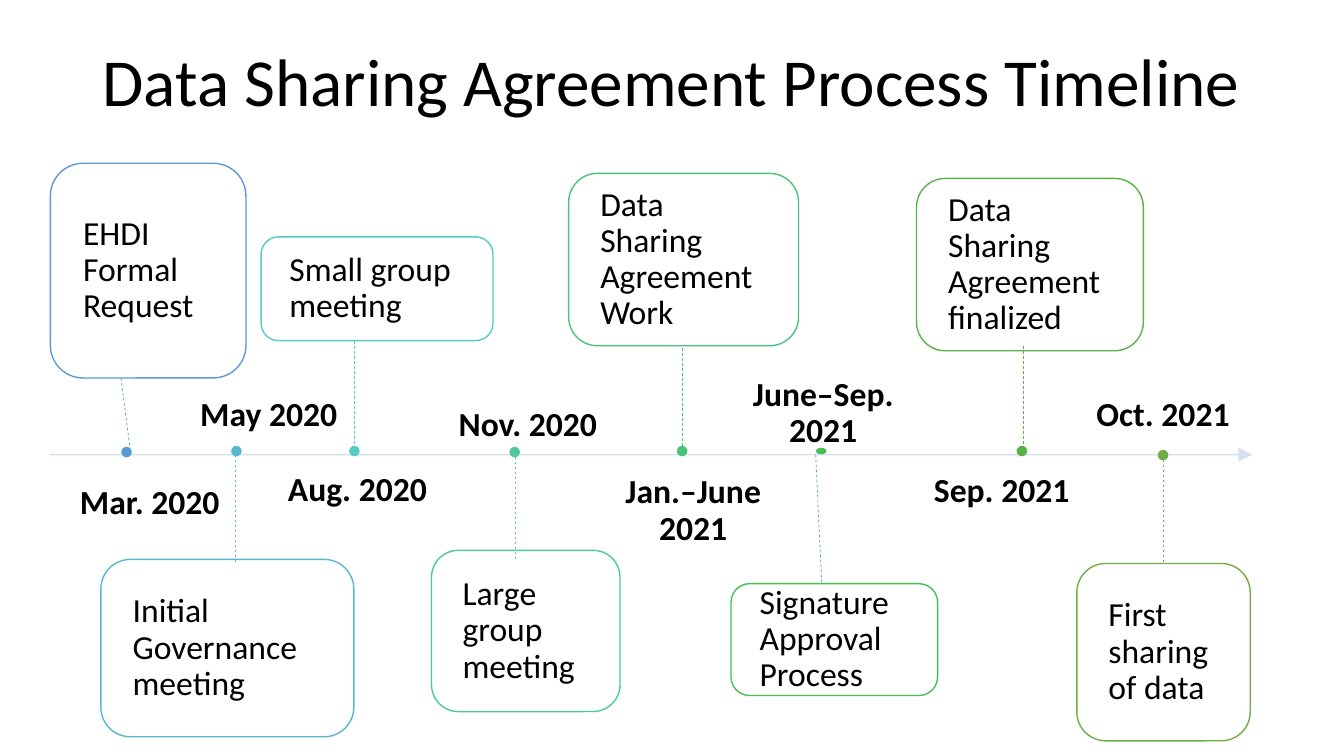
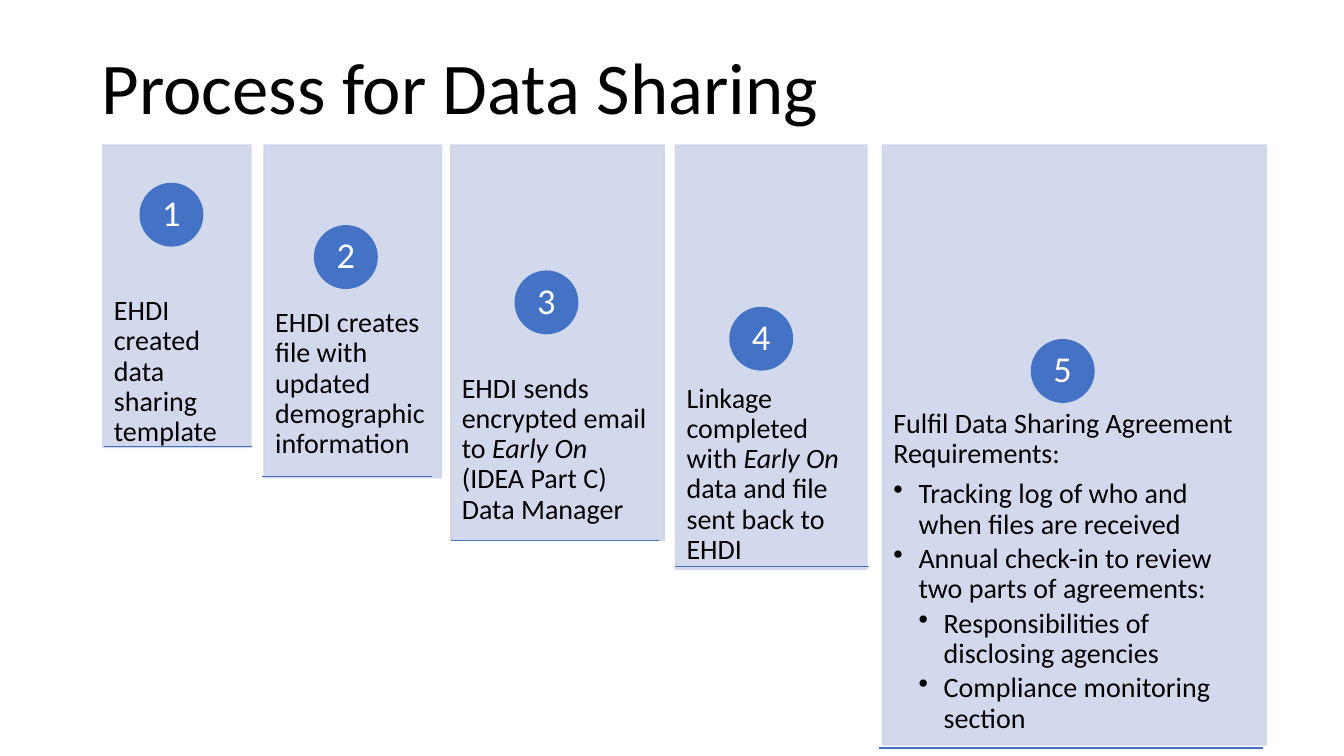
from dataclasses import dataclass
from typing import Optional, Sequence, Union

from lxml.etree import SubElement
from pptx import Presentation
from pptx.dml.color import RGBColor
from pptx.enum.dml import MSO_LINE
from pptx.enum.shapes import MSO_CONNECTOR, MSO_SHAPE
from pptx.enum.text import MSO_ANCHOR as Anchor, PP_ALIGN as Align
from pptx.oxml.ns import qn
from pptx.util import Inches, Pt


@dataclass(frozen=True)
class Theme:
    font: str = "Calibri"
    black: str = "000000"
    white: str = "FFFFFF"
    axis: str = "D2DEEF"
    panel: str = "CFD5EA"
    accent: str = "4472C4"
    opacity: int = 90
    timeline_size: int = 24
    step_size: int = 20
    number_size: int = 26


THEME = Theme()


@dataclass(frozen=True)
class Run:
    text: str
    italic: bool = False


@dataclass(frozen=True)
class Para:
    runs: Sequence[Run]
    level: int = 0  # 0 is plain text, 1 and up are bullets
    after: float = 0


@dataclass(frozen=True)
class Milestone:
    date: str
    date_at: tuple[float, float]
    event: str
    box: tuple[float, float, float, float]
    color: str
    stem: tuple[float, float, float, float]
    dot: tuple[float, float]
    above: bool  # date stands above the axis
    date_height: float = 0.64
    dot_height: float = 0.09


@dataclass(frozen=True)
class Step:
    left: float
    width: float
    height: float
    text_top: float
    circle: tuple[float, float]
    rule: tuple[float, float, float]  # left, top, width
    paras: Sequence[Para]


# Shared drawing functions
def rgb(color: str) -> RGBColor:
    return RGBColor.from_string(color)


def set_opacity(shape, percent: int) -> None:
    for color in shape.element.spPr.iter(qn("a:srgbClr")):
        SubElement(color, qn("a:alpha")).set("val", str(percent * 1000))


def add_bullet(paragraph, level: int) -> None:
    props = paragraph._p.get_or_add_pPr()
    props.set("marL", str(Inches(0.25 * level)))
    props.set("indent", str(Inches(-0.25)))
    SubElement(props, qn("a:buChar")).set("char", "•")


def put_text(shape, content: Union[str, Sequence[Para]], *, size: float,
             color: str = THEME.black, bold: bool = False,
             align: Align = Align.LEFT, anchor: Anchor = Anchor.MIDDLE,
             insets: tuple[float, float, float, float] = (0, 0, 0, 0)) -> None:
    """Fill a shape; insets are left, top, right, bottom in inches."""
    frame = shape.text_frame
    frame.word_wrap = True
    frame.vertical_anchor = anchor
    (frame.margin_left, frame.margin_top,
     frame.margin_right, frame.margin_bottom) = map(Inches, insets)
    paras = [Para([Run(content)])] if isinstance(content, str) else content
    for index, para in enumerate(paras):
        paragraph = frame.add_paragraph() if index else frame.paragraphs[0]
        if para.level:
            add_bullet(paragraph, para.level)
        paragraph.alignment = align
        paragraph.line_spacing = 0.9
        paragraph.space_after = Pt(para.after)
        for part in para.runs:
            run = paragraph.add_run()
            run.text = part.text
            font = run.font
            font.name, font.size = THEME.font, Pt(size)
            font.bold, font.italic = bold, part.italic
            font.color.rgb = rgb(color)


def add_text(slide, left: float, top: float, width: float, height: float,
             content: str, **text_format) -> None:
    box = slide.shapes.add_textbox(*map(Inches, (left, top, width, height)))
    put_text(box, content, **text_format)


def add_title(slide, text: str, top: float, size: float, align: Align) -> None:
    add_text(slide, 0.91, top, 11.5, 1.24, text, size=size, align=align,
             insets=(0.1, 0.05, 0.1, 0.05))


def add_block(slide, kind: MSO_SHAPE, left: float, top: float, width: float,
              height: float, fill: str, line: str):
    block = slide.shapes.add_shape(
        kind, *map(Inches, (left, top, width, height)))
    block.shadow.inherit = False
    block.fill.solid()
    block.fill.fore_color.rgb = rgb(fill)
    block.line.color.rgb = rgb(line)
    block.line.width = Pt(1)
    return block


def add_line(slide, x1: float, y1: float, x2: float, y2: float, color: str,
             width: float = 1, dash: Optional[MSO_LINE] = None,
             arrow: bool = False):
    connector = slide.shapes.add_connector(
        MSO_CONNECTOR.STRAIGHT, *map(Inches, (x1, y1, x2, y2)))
    connector.line.color.rgb = rgb(color)
    connector.line.width = Pt(width)
    if dash:
        connector.line.dash_style = dash
    props = connector.element.spPr
    if arrow:
        tail = SubElement(props.find(qn("a:ln")), qn("a:tailEnd"))
        for key, value in (("type", "triangle"), ("w", "lg"), ("len", "lg")):
            tail.set(key, value)
    SubElement(props, qn("a:effectLst"))
    return connector


# Timeline content
MILESTONES = [
    Milestone("Mar. 2020", (0.73, 4.82), "EHDI Formal Request",
              (0.5, 1.62, 1.94, 2.13), "5B9BD5",
              (1.2, 3.75, 1.3, 4.53), (1.21, 4.44), False),
    Milestone("May 2020", (1.91, 3.66), "Initial Governance meeting",
              (1, 5.55, 2.51, 1.76), "57B7D1",
              (2.33, 4.51, 2.33, 5.59), (2.3, 4.43), True),
    Milestone("Aug. 2020", (2.79, 4.69), "Small group meeting",
              (2.59, 2.35, 2.3, 1.03), "53CCC5",
              (3.51, 3.38, 3.51, 4.46), (3.47, 4.43), False),
    Milestone("Nov. 2020", (4.48, 3.76), "Large group meeting",
              (4.28, 5.46, 1.87, 1.6), "4FC7A0",
              (5.11, 4.48, 5.11, 5.56), (5.06, 4.44), True),
    Milestone("Jan.–June 2021", (6.12, 4.71), "Data Sharing Agreement Work",
              (5.64, 1.72, 2.28, 1.71), "4CC27B",
              (6.77, 3.45, 6.77, 4.53), (6.72, 4.43), False),
    Milestone("June–Sep. 2021", (7.41, 3.75), "Signature Approval Process",
              (7.25, 5.79, 2.05, 1.11), "48BD58",
              (8.09, 4.51, 8.15, 5.78), (8.1, 4.45), True,
              date_height=0.71, dot_height=0.05),
    Milestone("Sep. 2021", (9.18, 4.7), "Data Sharing Agreement finalized",
              (9.09, 1.77, 2.25, 1.71), "55B646",
              (10.15, 3.43, 10.15, 4.51), (10.09, 4.43), False),
    Milestone("Oct. 2021", (10.78, 3.66), "First sharing of data",
              (10.68, 5.59, 1.72, 1.76), "70AD47",
              (11.54, 4.51, 11.54, 5.59), (11.49, 4.47), True),
]

# Process content
STEPS = [
    Step(1.02, 1.47, 3, 2.94, (1.39, 1.82), (1.03, 4.43, 1.47),
         [Para([Run("EHDI created data sharing template")])]),
    Step(2.62, 1.76, 3.3, 3.06, (3.12, 2.24), (2.6, 4.73, 1.68),
         [Para([Run("EHDI creates file with updated demographic "
                    "information")])]),
    Step(4.47, 2.12, 3.92, 3.71, (5.11, 2.69), (4.47, 5.36, 2.07),
         [Para([Run("EHDI sends encrypted email to "),
                Run("Early On ", italic=True),
                Run("(IDEA Part C) Data Manager")])]),
    Step(6.7, 1.9, 4.21, 3.81, (7.24, 3.05), (6.69, 5.62, 1.93),
         [Para([Run("Linkage completed with "),
                Run("Early On", italic=True),
                Run(" data and file sent back to EHDI")])]),
    Step(8.75, 3.81, 5.95, 4.06, (10.23, 3.37), (8.72, 7.42, 3.81),
         [Para([Run("Fulfil Data Sharing Agreement Requirements:")], after=7),
          *(Para([Run(text)], level, after=3) for level, text in (
              (1, "Tracking log of who and when files are received"),
              (1, "Annual check-in to review two parts of agreements:"),
              (2, "Responsibilities of disclosing agencies"),
              (2, "Compliance monitoring section")))]),
]


def draw_milestone(slide, item: Milestone) -> None:
    add_text(slide, *item.date_at, 1.51, item.date_height, item.date,
             size=THEME.timeline_size, bold=True, align=Align.CENTER,
             anchor=Anchor.BOTTOM if item.above else Anchor.TOP)
    event = add_block(slide, MSO_SHAPE.ROUNDED_RECTANGLE, *item.box,
                      THEME.white, item.color)
    put_text(event, item.event, size=THEME.timeline_size, insets=(0.23,) * 4)
    add_line(slide, *item.stem, item.color, width=0.5, dash=MSO_LINE.DASH)
    add_block(slide, MSO_SHAPE.OVAL, *item.dot, 0.09, item.dot_height,
              item.color, item.color)


def draw_step(slide, number: int, step: Step) -> None:
    top = 1.44
    panel = add_block(slide, MSO_SHAPE.RECTANGLE, step.left, top, step.width,
                      step.height, THEME.panel, THEME.panel)
    set_opacity(panel, THEME.opacity)
    put_text(panel, step.paras, size=THEME.step_size, anchor=Anchor.TOP,
             insets=(0.11, step.text_top - top, 0.11, 0))
    circle = add_block(slide, MSO_SHAPE.OVAL, *step.circle, 0.62, 0.62,
                       THEME.accent, THEME.accent)
    put_text(circle, str(number), size=THEME.number_size, color=THEME.white,
             align=Align.CENTER, insets=(0.05, 0.01, 0.05, 0.01))
    left, rule_top, width = step.rule
    add_line(slide, left, rule_top, left + width, rule_top, THEME.accent)


def main() -> None:
    deck = Presentation()
    deck.slide_width, deck.slide_height = Inches(13.33), Inches(7.5)
    blank = deck.slide_layouts[6]

    # Timeline slide
    timeline = deck.slides.add_slide(blank)
    add_title(timeline, "Data Sharing Agreement Process Timeline",
              top=0.22, size=48, align=Align.CENTER)
    axis = add_line(timeline, 0.49, 4.51, 12.42, 4.51, THEME.axis, arrow=True)
    set_opacity(axis, THEME.opacity)
    for item in MILESTONES:
        draw_milestone(timeline, item)

    # Process slide
    process = deck.slides.add_slide(blank)
    add_title(process, "Process for Data Sharing",
              top=0.28, size=52, align=Align.LEFT)
    for number, step in enumerate(STEPS, start=1):
        draw_step(process, number, step)

    deck.save("out.pptx")


if __name__ == "__main__":
    main()
